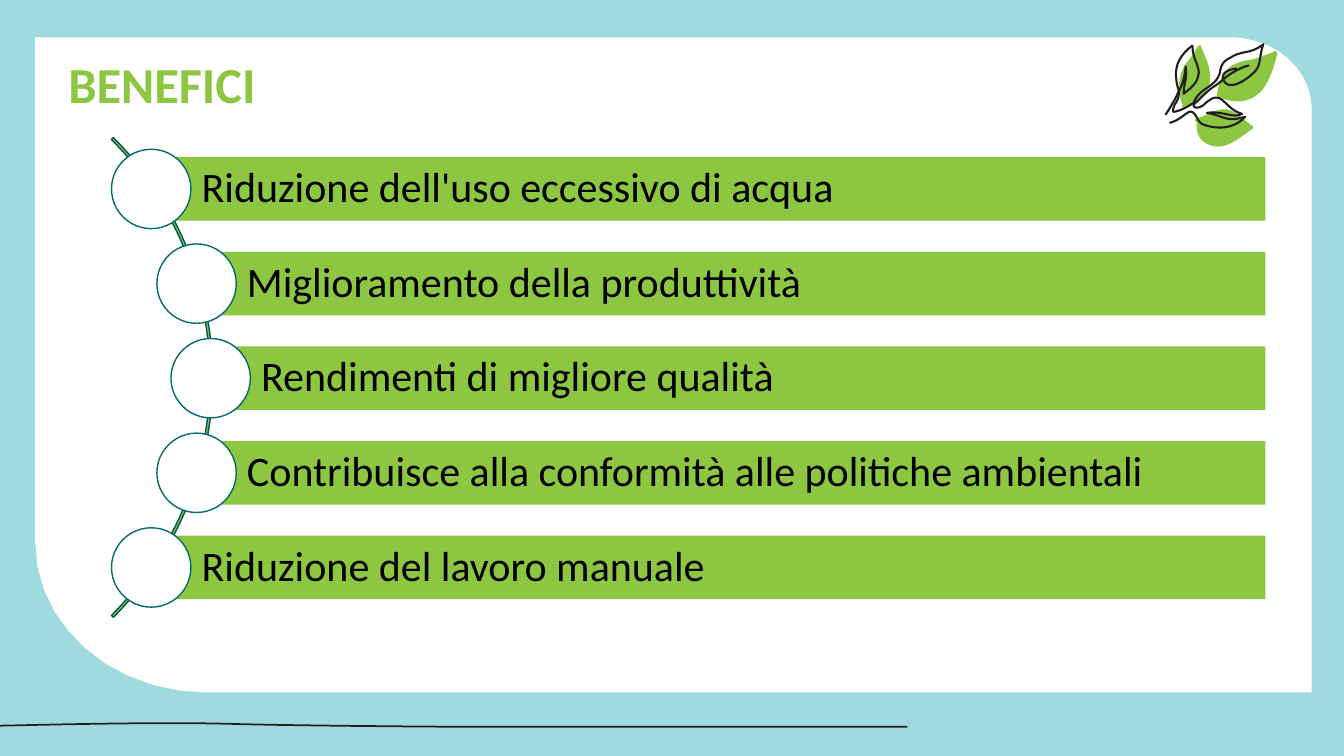
from dataclasses import dataclass

from lxml import etree
from pptx import Presentation
from pptx import util as u
from pptx.dml.color import RGBColor
from pptx.enum import shapes, text
from pptx.oxml import ns

TITLE = "BENEFICI"
BENEFITS = [
    ("Riduzione dell'uso eccessivo di acqua", 1.5),
    ("Miglioramento della produttività", 1.95),
    ("Rendimenti di migliore qualità", 2.09),
    ("Contribuisce alla conformità alle politiche ambientali", 1.95),
    ("Riduzione del lavoro manuale", 1.5),
]

# Each contour is a start point followed by Bezier segments of three points.
PANEL = [[(0.35, 0.37),
          (4.57, 0.37), (7.98, 0.37), (12.2, 0.37),
          (12.65, 0.37), (13.01, 0.69), (13.01, 1.08),
          (13.01, 3), (13.01, 5), (13.01, 6.87),
          (9, 6.87), (6, 6.87), (2.05, 6.87),
          (1.11, 6.87), (0.35, 6.2), (0.35, 5.38)]]
GROUND = [[(0, 7.2),
           (0.09, 7.2), (1.44, 7.16), (2.23, 7.18),
           (2.81, 7.2), (4.41, 7.21), (4.43, 7.21),
           (6, 7.21), (7.5, 7.21), (9, 7.21)]]
LEAVES = [
    [(11.78, 1.06),
     (11.88, 1.01), (11.98, 0.94), (12, 0.82),
     (12.02, 0.7), (11.96, 0.57), (11.91, 0.46),
     (11.91, 0.44), (11.89, 0.45), (11.88, 0.46),
     (11.85, 0.52), (11.81, 0.57), (11.77, 0.62),
     (11.68, 0.74), (11.67, 0.92), (11.73, 1.04),
     (11.71, 1.06), (11.75, 1.09), (11.78, 1.06)],
    [(12.47, 0.94),
     (12.57, 0.87), (12.63, 0.69), (12.67, 0.53),
     (12.67, 0.52), (12.66, 0.5), (12.64, 0.51),
     (12.57, 0.54), (12.5, 0.57), (12.42, 0.59),
     (12.36, 0.6), (12.3, 0.61), (12.24, 0.64),
     (12.13, 0.69), (12.09, 0.81), (12.07, 0.94),
     (12.06, 0.95), (12.07, 0.96), (12.09, 0.96),
     (12.21, 1.02), (12.36, 1.03), (12.47, 0.94)],
    [(12.42, 1.28),
     (12.43, 1.27), (12.43, 1.26), (12.42, 1.25),
     (12.37, 1.21), (12.32, 1.17), (12.27, 1.13),
     (12.15, 1.04), (12.04, 1.1), (11.92, 1.16),
     (11.9, 1.16), (11.88, 1.17), (11.86, 1.18),
     (11.85, 1.19), (11.85, 1.21), (11.87, 1.21),
     (11.86, 1.33), (11.9, 1.4), (12, 1.44),
     (12.16, 1.5), (12.3, 1.36), (12.42, 1.28)],
]
SPRIG = [
    [(11.83, 0.45),
     (11.67, 0.57), (11.64, 0.69), (11.68, 0.86),
     (11.71, 0.94), (11.68, 1), (11.65, 1.04),
     (11.64, 1.07), (11.63, 1.09), (11.64, 1.11),
     (11.71, 1.1), (11.78, 1.06), (11.84, 1.02),
     (11.87, 0.94), (11.92, 0.91), (11.96, 0.88),
     (12.02, 0.84), (12.08, 0.8), (12.1, 0.72),
     (12.11, 0.64), (12.14, 0.6), (12.21, 0.57),
     (12.25, 0.54), (12.3, 0.53), (12.34, 0.52),
     (12.4, 0.51), (12.47, 0.49), (12.53, 0.44),
     (12.5, 0.52), (12.5, 0.61), (12.48, 0.66),
     (12.45, 0.73), (12.31, 0.83), (12.24, 0.84),
     (12.19, 0.85), (12.15, 0.84), (12.13, 0.78),
     (12.12, 0.71), (12.2, 0.69), (12.27, 0.68)],
    [(12.39, 0.65),
     (12.32, 0.66), (12.2, 0.73), (12.13, 0.79),
     (12.1, 0.82), (12.04, 0.86), (12.01, 0.88),
     (11.96, 0.92), (11.9, 0.98), (11.84, 1.04),
     (11.83, 1.08), (11.91, 1.08), (11.96, 1.02),
     (11.99, 1), (12.03, 0.96), (12.08, 0.97),
     (12.14, 0.98), (12.2, 1.1), (12.32, 1.13),
     (12.25, 1.16), (12.2, 1.14), (12.15, 1.13),
     (12.1, 1.12), (12.04, 1.11), (11.97, 1.12),
     (12.05, 1.13), (12.12, 1.17), (12.19, 1.18),
     (12.24, 1.19), (12.3, 1.17), (12.35, 1.16),
     (12.24, 1.28), (12.07, 1.29), (11.92, 1.23),
     (11.87, 1.19), (11.86, 1.12), (11.82, 1.11),
     (11.78, 1.09), (11.72, 1.19), (11.6, 1.22)],
    [(11.83, 0.45),
     (11.82, 0.56), (11.89, 0.64), (11.89, 0.72),
     (11.88, 0.82), (11.83, 0.86), (11.74, 0.93),
     (11.74, 0.84), (11.78, 0.76), (11.76, 0.66),
     (11.75, 0.75), (11.74, 0.82), (11.69, 0.91),
     (11.66, 0.98), (11.6, 1.08), (11.56, 1.14)],
]


@dataclass(frozen=True)
class Theme:
    font: str = "Calibri"
    title: int = 36
    body: int = 30
    sky: str = "9FDADF"
    white: str = "FFFFFF"
    green: str = "8DC641"
    arc: str = "035657"
    ring: str = "056C6E"
    ink: str = "231F20"
    black: str = "000000"


T = Theme()
WIDTH, HEIGHT = 13.33, 7.5
BAR_TOP, BAR_RIGHT, BAR_H = 1.56, 12.55, 0.63
PITCH = BAR_H * 1.49
DOT = BAR_H * 1.25
ARC = 6.73
STEPS = 10


def paint(sp, fill=None, line=None, weight=1):
    sp.shadow.inherit = False
    if fill:
        sp.fill.solid()
        sp.fill.fore_color.rgb = RGBColor.from_string(fill)
    else:
        sp.fill.background()
    if line:
        sp.line.color.rgb = RGBColor.from_string(line)
        sp.line.width = u.Pt(weight)
    else:
        sp.line.fill.background()
    return sp


def add_preset(s, kind, box, fill, line=None):
    sp = s.shapes.add_shape(kind, *[u.Inches(v) for v in box])
    return paint(sp, fill, line)


def flatten(contour):
    points = contour[:1]
    for i in range(0, len(contour) - 1, 3):
        a, b, c, d = contour[i:i + 4]
        for k in range(1, STEPS + 1):
            t = k / STEPS
            v = 1 - t
            points.append(tuple(
                v**3 * p + 3 * v * v * t * q + 3 * v * t * t * r + t**3 * w
                for p, q, r, w in zip(a, b, c, d)))
    return [(u.Inches(x), u.Inches(y)) for x, y in points]


def add_outline(s, contours, fill=None, line=None, weight=1):
    builder = None
    for contour in contours:
        start, *rest = flatten(contour)
        if builder is None:
            builder = s.shapes.build_freeform(*start, scale=1.0)
        else:
            builder.move_to(*start)
        builder.add_line_segments(rest, close=fill is not None)
    return paint(builder.convert_to_shape(), fill, line, weight)


def write(sp, words, size, color, bold, insets, anchor):
    tf = sp.text_frame
    tf.word_wrap = True
    tf.vertical_anchor = anchor
    tf.margin_left, tf.margin_top, tf.margin_right, tf.margin_bottom = [
        u.Inches(v) for v in insets]
    tf.text = words
    p = tf.paragraphs[0]
    p.alignment = text.PP_ALIGN.LEFT
    p.line_spacing = 0.9
    f = p.runs[0].font
    f.name, f.size, f.bold = T.font, u.Pt(size), bold
    f.color.rgb = RGBColor.from_string(color)


def main():
    prs = Presentation()
    prs.slide_width, prs.slide_height = u.Inches(WIDTH), u.Inches(HEIGHT)
    s = prs.slides.add_slide(prs.slide_layouts[6])
    kind = shapes.MSO_SHAPE

    add_preset(s, kind.RECTANGLE, (0, 0, WIDTH, HEIGHT), T.sky)
    add_outline(s, PANEL, fill=T.white)
    add_outline(s, GROUND, line=T.ink, weight=1.25)

    title = s.shapes.add_textbox(*[u.Inches(v) for v in (0.58, 0.55, 11.59, 0.88)])
    write(title, TITLE, T.title, T.green, True, (0.1, 0.05, 0.1, 0.05),
          text.MSO_ANCHOR.TOP)

    arc = add_preset(s, kind.BLOCK_ARC, (-4.62, 0.38, ARC, ARC), T.green, T.arc)
    for i, value in enumerate((189, 27, 0.004)):
        arc.adjustments[i] = value

    for i, (words, left) in enumerate(BENEFITS):
        top = BAR_TOP + i * PITCH
        bar = add_preset(s, kind.RECTANGLE, (left, top, BAR_RIGHT - left, BAR_H), T.green)
        write(bar, words, T.body, T.black, False, (0.5, 0.08, 0.08, 0.08),
              text.MSO_ANCHOR.MIDDLE)
        add_preset(s, kind.OVAL, (left - DOT / 2, top + (BAR_H - DOT) / 2, DOT, DOT),
                   T.white, T.ring)

    for leaf in LEAVES:
        add_outline(s, [leaf], fill=T.green)
    sprig = add_outline(s, SPRIG, line=T.ink, weight=1.5)
    etree.SubElement(sprig.line._get_or_add_ln(), ns.qn("a:round"))
    prs.save("out.pptx")


if __name__ == "__main__":
    main()
